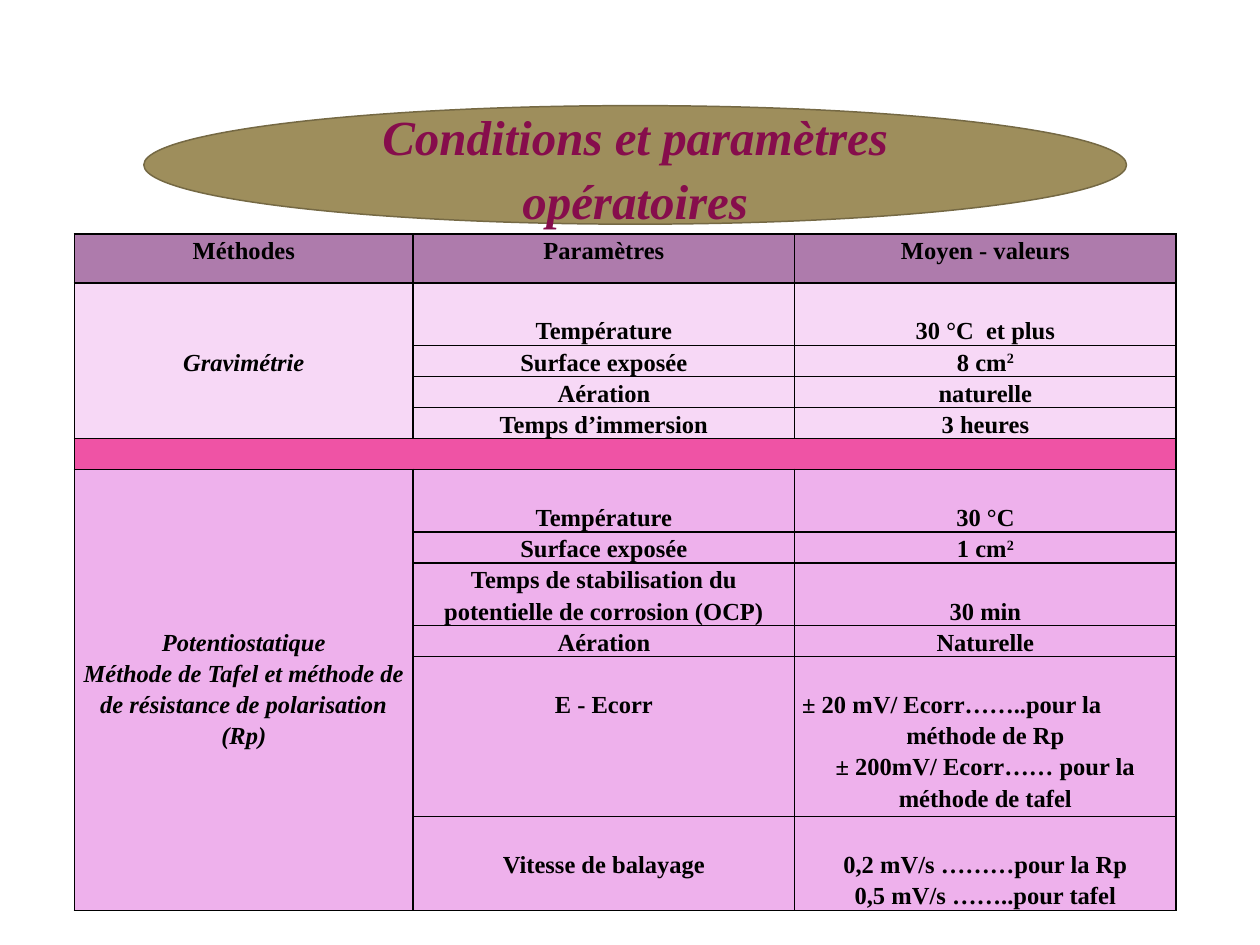
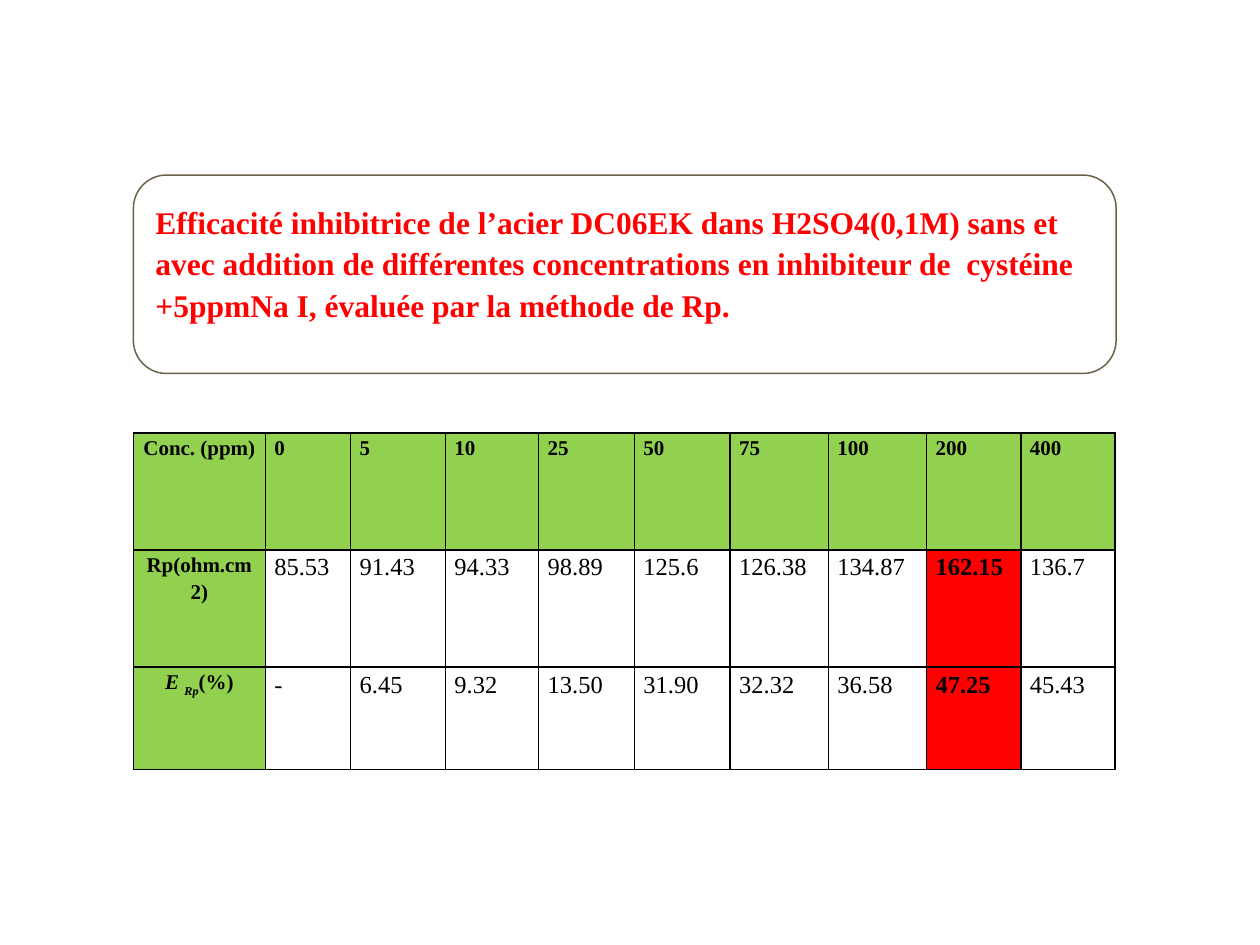
from lxml import etree
from pptx import Presentation
from pptx.dml.color import RGBColor
from pptx.enum import shapes, text
from pptx.oxml.ns import qn
from pptx.util import Cm, Pt

FONT = "Times New Roman"
BLACK, WHITE, RED, GREEN = "000000", "FFFFFF", "FF0000", "92D050"
MAUVE, ROSE, LILAC, PINK = "AE7BAC", "F7D8F6", "EEB1EC", "EF53A5"
LINE = 0.63  # height in cm of one 14 pt line in a cell
CENTER, LEFT, JUSTIFY = (text.PP_ALIGN.CENTER, text.PP_ALIGN.LEFT,
                         text.PP_ALIGN.JUSTIFY)
SUP, SUB = 30000, -25000

TITLE = "Conditions et paramètres opératoires"
CAPTION = ("Efficacité inhibitrice de l’acier DC06EK dans H2SO4(0,1M) sans et avec "
           "addition de différentes concentrations en inhibiteur de  cystéine "
           "+5ppmNa I, évaluée par la méthode de Rp.")


def area(number):
    return [(f"{number} cm", {}), ("2", {"baseline": SUP})]


# height, fill, then one (lines skipped at the top, paragraphs) per column
CONDITIONS = [
    (0.98, MAUVE, (0, ["Méthodes"]), (0, ["Paramètres"]), (0, ["Moyen - valeurs"])),
    (1.26, ROSE, (2, ["Gravimétrie"]), (1, ["Température"]), (1, ["30 °C  et plus"])),
    (0.62, ROSE, None, (0, ["Surface exposée"]), (0, [area(8)])),
    (0.62, ROSE, None, (0, ["Aération"]), (0, ["naturelle"])),
    (0.62, ROSE, None, (0, ["Temps d’immersion"]), (0, ["3 heures"])),
    (0.62, PINK, None, None, None),
    (1.26, LILAC, (5, ["Potentiostatique", "Méthode de Tafel et méthode de de "
                       "résistance de polarisation (Rp)"]),
     (1, ["Température"]), (1, ["30 °C"])),
    (0.62, LILAC, None, (0, ["Surface exposée"]), (0, [area(1)])),
    (1.25, LILAC, None, (0, ["Temps de stabilisation du potentielle de corrosion (OCP)"]),
     (1, ["30 min"])),
    (0.62, LILAC, None, (0, ["Aération"]), (0, ["Naturelle"])),
    (3.22, LILAC, None, (1, ["E - Ecorr"]),
     (1, ["± 20 mV/ Ecorr……..pour la", "méthode de Rp",
          "± 200mV/ Ecorr…… pour la méthode de tafel"])),
    (1.9, LILAC, None, (1, ["Vitesse de balayage"]),
     (1, ["0,2 mV/s ………pour la Rp", "0,5 mV/s ……..pour tafel"])),
]
CONDITION_COLS = [6.83, 7.69, 7.69]
CONDITION_SPANS = [((1, 0), (4, 0)), ((5, 0), (5, 2)), ((6, 0), (11, 0))]

EFFICIENCY = [
    ["Conc. (ppm)", "0", "5", "10", "25", "50", "75", "100", "200", "400"],
    ["Rp(ohm.cm2)", "85.53", "91.43", "94.33", "98.89", "125.6", "126.38",
     "134.87", "162.15", "136.7"],
    [[("E ", {"italic": True}), ("Rp", {"italic": True, "baseline": SUB}), ("(%)", {})],
     "-", "6.45", "9.32", "13.50", "31.90", "32.32", "36.58", "47.25", "45.43"],
]
EFFICIENCY_COLS = [2.66, 1.72, 1.91, 1.88, 1.93, 1.93, 1.98, 1.98, 1.9, 1.9]
EFFICIENCY_ROWS = [2.36, 2.36, 2.06]
BEST_COL = 8


def rgb(value):
    return RGBColor.from_string(value)


def write(p, content, color=BLACK, align=CENTER, spacing=1.15, after=0, **style):
    """Fill a paragraph from a string or from (string, format) runs."""
    for name, value in {"alignment": align, "line_spacing": spacing,
                        "space_after": Pt(after)}.items():
        setattr(p, name, value)
    for part, extra in [(content, {})] if isinstance(content, str) else content:
        r = p.add_run()
        r.text = part
        r.font.color.rgb = rgb(color)
        for name, value in {"name": FONT, "bold": True, **style, **extra}.items():
            if name == "baseline":
                r.font._element.set(name, str(value))
            else:
                setattr(r.font, name, value)


def add_panel(slide, kind, box, fill, line):
    sp = slide.shapes.add_shape(kind, *map(Cm, box))
    sp.shadow.inherit = False
    sp.fill.solid()
    sp.fill.fore_color.rgb = rgb(fill)
    sp.line.color.rgb = rgb(line)
    sp.line.width = Pt(0.85)
    sp.text_frame.word_wrap = True
    return sp.text_frame


def style_cell(cell, fill, side):
    """Give a cell black borders, a fill and side margins."""
    tc_pr = cell._tc.get_or_add_tcPr()
    for edge in ("lnL", "lnR", "lnT", "lnB"):
        ln = etree.SubElement(tc_pr, qn(f"a:{edge}"), w=str(Pt(1)))
        solid = etree.SubElement(ln, qn("a:solidFill"))
        etree.SubElement(solid, qn("a:srgbClr"), val=BLACK)
    cell.fill.solid()
    cell.fill.fore_color.rgb = rgb(fill)
    cell.margin_left = cell.margin_right = Cm(side)
    cell.margin_top = cell.margin_bottom = 0
    end = etree.SubElement(cell.text_frame.paragraphs[0]._p, qn("a:endParaRPr"))
    end.set("sz", "1200")


def add_grid(slide, left, top, cols, rows):
    table = slide.shapes.add_table(len(rows), len(cols), Cm(left), Cm(top),
                                   Cm(sum(cols)), Cm(sum(rows))).table
    table.first_row = table.horz_banding = False
    for col, width in zip(table.columns, cols):
        col.width = Cm(width)
    for row, height in zip(table.rows, rows):
        row.height = Cm(height)
    return table


def conditions_slide(slide):
    tf = add_panel(slide, shapes.MSO_SHAPE.OVAL, (2.9, 2.13, 19.81, 2.39),
                   "9E8E5C", "756944")
    tf.vertical_anchor = text.MSO_ANCHOR.MIDDLE
    write(tf.paragraphs[0], TITLE, "860D4C", spacing=1.1, size=Pt(28), italic=True)

    table = add_grid(slide, 1.5, 4.72, CONDITION_COLS, [row[0] for row in CONDITIONS])
    for i, (_, fill, *entries) in enumerate(CONDITIONS):
        for j, entry in enumerate(entries):
            cell = table.cell(i, j)
            style_cell(cell, fill, 0.15)
            if not entry:
                continue
            skipped, paragraphs = entry
            cell.margin_top = Cm(skipped * LINE)
            tf = cell.text_frame
            for k, content in enumerate(paragraphs):
                p = tf.add_paragraph() if k else tf.paragraphs[0]
                align = LEFT if content == "± 20 mV/ Ecorr……..pour la" else CENTER
                write(p, content, align=align, size=Pt(14), italic=i > 0 and j == 0)
    for first, last in CONDITION_SPANS:
        table.cell(*first).merge(table.cell(*last))


def efficiency_slide(slide):
    table = add_grid(slide, 2.69, 8.73, EFFICIENCY_COLS, EFFICIENCY_ROWS)
    for i, row in enumerate(EFFICIENCY):
        for j, content in enumerate(row):
            cell = table.cell(i, j)
            heading, best = i == 0 or j == 0, j == BEST_COL
            style_cell(cell, GREEN if heading else RED if best else WHITE, 0.18)
            write(cell.text_frame.paragraphs[0], content, after=12,
                  align=CENTER if j == 0 else LEFT if i == 0 else JUSTIFY,
                  size=Pt(12 if heading else 14), bold=heading or best)

    tf = add_panel(slide, shapes.MSO_SHAPE.ROUNDED_RECTANGLE, (2.69, 3.53, 19.81, 4),
                   WHITE, "6B6149")
    tf.vertical_anchor = text.MSO_ANCHOR.TOP
    tf.margin_top = Cm(0.29)
    write(tf.paragraphs[0], CAPTION, RED, LEFT, 1.1, size=Pt(18))


def main():
    prs = Presentation()
    prs.slide_width, prs.slide_height = Cm(25.4), Cm(19.05)
    for build in (conditions_slide, efficiency_slide):
        build(prs.slides.add_slide(prs.slide_layouts[6]))
    prs.save("out.pptx")


if __name__ == "__main__":
    main()
